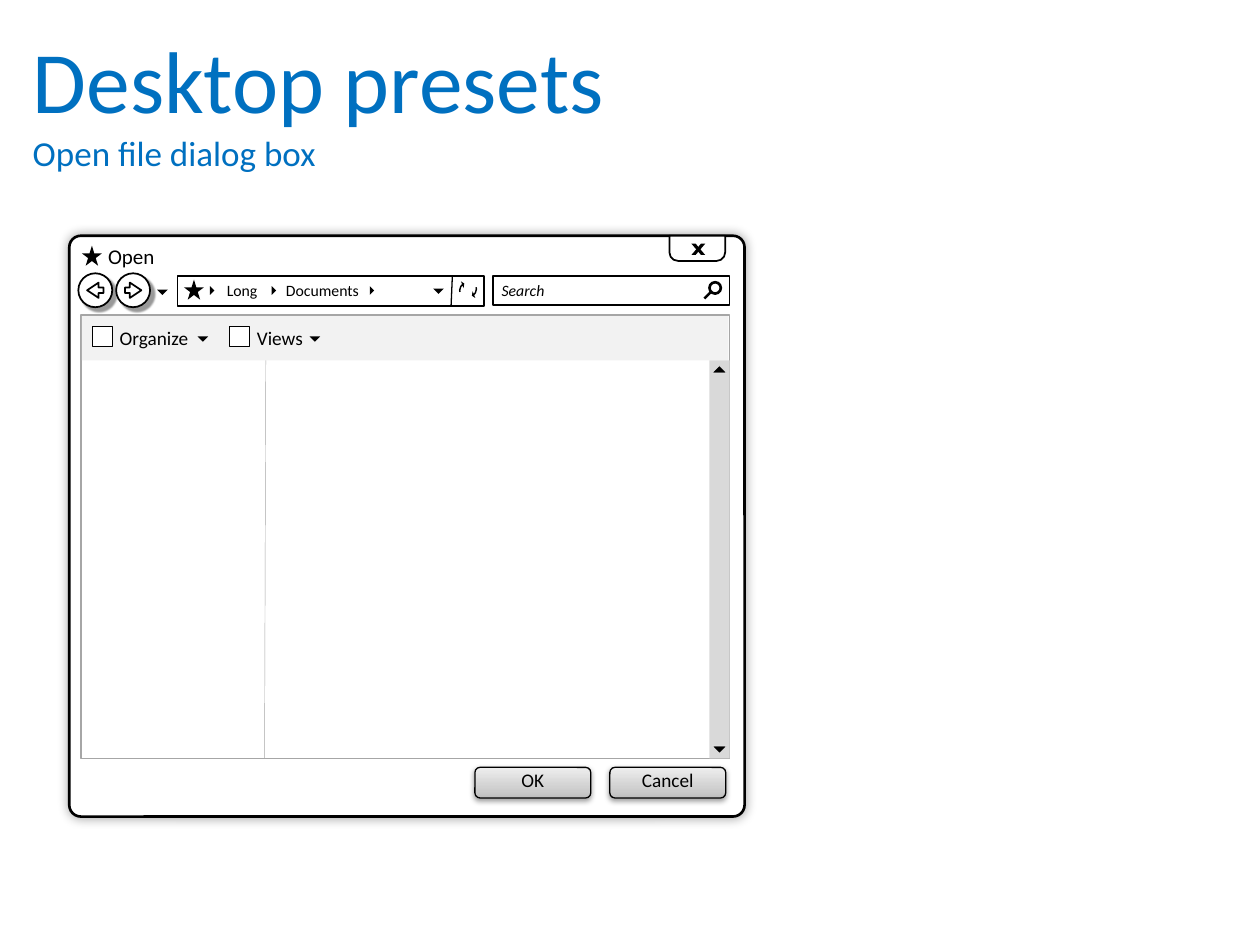
from copy import deepcopy
from dataclasses import dataclass

from lxml import etree
from pptx import Presentation
from pptx.dml.color import RGBColor
from pptx.enum.shapes import MSO_CONNECTOR, MSO_SHAPE
from pptx.enum.text import MSO_ANCHOR, MSO_AUTO_SIZE, PP_ALIGN
from pptx.oxml.ns import qn
from pptx.util import Pt

RECT = MSO_SHAPE.RECTANGLE
ROUND_RECT = MSO_SHAPE.ROUNDED_RECTANGLE
TAB = MSO_SHAPE.ROUND_2_SAME_RECTANGLE
SLASH = MSO_SHAPE.PARALLELOGRAM
ELLIPSE = MSO_SHAPE.OVAL
STAR = MSO_SHAPE.STAR_5_POINT
TRIANGLE = MSO_SHAPE.RIGHT_TRIANGLE
LEFT_ARROW = MSO_SHAPE.LEFT_ARROW
RIGHT_ARROW = MSO_SHAPE.RIGHT_ARROW
CIRCULAR_ARROW = MSO_SHAPE.CIRCULAR_ARROW
STRAIGHT = MSO_CONNECTOR.STRAIGHT
TOP, MIDDLE = MSO_ANCHOR.TOP, MSO_ANCHOR.MIDDLE
LEFT, CENTER = PP_ALIGN.LEFT, PP_ALIGN.CENTER
GROW = MSO_AUTO_SIZE.SHAPE_TO_FIT_TEXT

UP, RIGHT, DOWN = 135, 225, 315


@dataclass(frozen=True)
class Theme:
    font: str = "Calibri"
    accent: str = "0070C0"
    ink: str = "000000"
    paper: str = "FFFFFF"
    border: str = "A6A6A6"
    toolbar: str = "F2F2F2"
    scrollbar: str = "D9D9D9"
    button: tuple = ((0, "BDBDBD"), (0.35, "D1D1D1"), (1, "EEEEEE"))
    title: int = 50
    subtitle: int = 20
    caption: int = 12
    label: int = 11
    small: int = 9


class Builder:
    def __init__(self, slide, theme):
        self.s = slide
        self.t = theme

    def run(self, p, text, size, color=None, italic=False):
        r = p.add_run()
        r.text = text
        r.font.name = self.t.font
        r.font.size = Pt(size)
        r.font.italic = italic
        r.font.color.rgb = RGBColor.from_string(color or self.t.ink)

    def frame(self, tf, insets, anchor=TOP):
        tf.word_wrap = True
        tf.vertical_anchor = anchor
        tf.margin_left, tf.margin_top, tf.margin_right, tf.margin_bottom = map(Pt, insets)

    def title(self, box, *lines):
        sp = self.s.shapes.title
        sp.left, sp.top, sp.width, sp.height = map(Pt, box)
        tf = sp.text_frame
        self.frame(tf, (7.2, 3.6, 7.2, 3.6))
        tf.auto_size = GROW
        for i, (text, size) in enumerate(lines):
            p = tf.add_paragraph() if i else tf.paragraphs[0]
            p.alignment = LEFT
            p.space_before = Pt(0)
            self.run(p, text, size, self.t.accent)

    def text(self, x, y, w, h, text, size, italic=False, inset=0):
        sp = self.s.shapes.add_textbox(Pt(x), Pt(y), Pt(w), Pt(h))
        tf = sp.text_frame
        self.frame(tf, (inset, 3, inset, 3))
        tf.auto_size = GROW
        self.run(tf.paragraphs[0], text, size, italic=italic)

    def shape(self, kind, x, y, w, h, fill=None, line=None, width=1, adj=(), rot=0):
        sp = self.s.shapes.add_shape(kind, Pt(x), Pt(y), Pt(w), Pt(h))
        sp.shadow.inherit = False
        sp.rotation = rot
        for i, value in enumerate(adj):
            sp.adjustments[i] = value
        sp.fill.solid()
        sp.fill.fore_color.rgb = RGBColor.from_string(fill or self.t.paper)
        if line:
            sp.line.color.rgb = RGBColor.from_string(line)
            sp.line.width = Pt(width)
        else:
            sp.line.fill.background()
        return sp

    def glyph(self, kind, x, y, w, h, adj=(), rot=0):
        return self.shape(kind, x, y, w, h, self.t.ink, adj=adj, rot=rot)

    def pointer(self, x, y, size, rot):
        return self.glyph(TRIANGLE, x, y, size, size, rot=rot)

    def shadow(self, sp, alpha, blur, dist, angle):
        effects = sp._element.spPr.find(qn("a:effectLst"))
        shadow = etree.SubElement(
            effects, qn("a:outerShdw"), blurRad=str(Pt(blur)), dist=str(Pt(dist)),
            dir=str(angle * 60000), algn="ctr", rotWithShape="0")
        color = etree.SubElement(shadow, qn("a:srgbClr"), val=self.t.ink)
        etree.SubElement(color, qn("a:alpha"), val=str(alpha * 1000))

    def line(self, x1, y1, x2, y2, color, width):
        c = self.s.shapes.add_connector(STRAIGHT, Pt(x1), Pt(y1), Pt(x2), Pt(y2))
        c.line.color.rgb = RGBColor.from_string(color)
        c.line.width = Pt(width)
        etree.SubElement(c._element.spPr, qn("a:effectLst"))

    def nav_button(self, x, kind):
        ink = self.t.ink
        sp = self.shape(ELLIPSE, x, 156.2, 19.4, 19.4, line=ink)
        self.shadow(sp, 40, 1, 3, 45)
        self.shape(kind, x + 5, 161.5, 9.4, 8.8, line=ink, adj=(0.354, 0.749))

    def menu(self, x, label, pointer_x):
        self.shape(RECT, x, 186.5, 11.5, 11.5, line=self.t.ink, width=0.25)
        self.text(x + 15.8, 183.6, 45.4, 18.7, label, self.t.label)
        self.pointer(pointer_x, 190.1, 4.3, DOWN)

    def button(self, x, label):
        sp = self.shape(ROUND_RECT, x, 438.5, 66.2, 17.5, line=self.t.ink, width=0.75)
        sp.fill.gradient()
        sp.fill.gradient_angle = 90
        stops = sp._element.spPr.find(".//" + qn("a:gsLst"))
        stops.insert(1, deepcopy(stops[0]))
        for stop, (position, color) in zip(sp.fill.gradient_stops, self.t.button):
            stop.position = position
            stop.color.rgb = RGBColor.from_string(color)
        self.shadow(sp, 38, 3.1, 1.6, 90)
        tf = sp.text_frame
        self.frame(tf, (7.2, 0, 7.2, 3), MIDDLE)
        p = tf.paragraphs[0]
        p.alignment = CENTER
        self.run(p, label, self.t.label)


def main():
    prs = Presentation()
    prs.slide_width, prs.slide_height = Pt(720), Pt(540)
    t = Theme()
    b = Builder(prs.slides.add_slide(prs.slide_layouts[5]), t)

    b.title((11.5, 11.5, 697.7, 92.2),
            ("Desktop presets", t.title), ("Open file dialog box", t.subtitle))

    window = b.shape(ROUND_RECT, 39.6, 134.7, 385.9, 331.9, line=t.ink, width=1.5, adj=(0.02,))
    b.shadow(window, 37, 6, 0, 0)
    b.shape(TAB, 382.5, 134.7, 31.9, 14.4, line=t.ink, adj=(0.344, 0), rot=180)
    for flip in ("0", "1"):
        stroke = b.glyph(SLASH, 395.1, 139.2, 7.9, 6.5, adj=(0.851,))
        stroke._element.spPr.xfrm.set("flipH", flip)
    b.shape(RECT, 46.1, 180, 370.8, 253.4, line=t.border)

    b.nav_button(44.8, LEFT_ARROW)
    b.nav_button(66.4, RIGHT_ARROW)
    b.pointer(90.7, 163.4, 4.3, DOWN)
    b.glyph(STAR, 46.8, 140.4, 11.5, 11.5)
    b.text(54.7, 135.9, 225.4, 21.6, "Open", t.caption, inset=7.2)

    b.shape(RECT, 101.5, 157.7, 175, 17.3, line=t.ink)
    b.glyph(STAR, 105.1, 159.8, 11.5, 11.5)
    for x in (118.1, 153.4, 209.5):
        b.pointer(x, 164.2, 3.6, RIGHT)
    b.text(129.6, 157.7, 28.1, 16.6, "Long", t.small)
    b.text(163.4, 157.7, 73.4, 16.6, "Documents", t.small)
    b.pointer(248.4, 162.7, 4.3, DOWN)
    b.line(258.5, 157.7, 257.8, 174.2, t.ink, 0.75)
    for x, y, rot in ((262.1, 159.1, 210), (260.6, 159.8, 31.3)):
        b.glyph(CIRCULAR_ARROW, x, y, 12.2, 12.2, (0.07, 11.59, 119.57, 80.81, 0.17), rot)

    b.shape(RECT, 281.5, 157.7, 135.4, 16.6, line=t.ink)
    b.text(286.6, 157.7, 73.4, 16.6, "Search", t.small, italic=True)
    b.shape(ELLIPSE, 405.4, 161.3, 6.5, 6.5, line=t.ink, width=1.5)
    b.line(406.1, 167, 402.5, 170.6, t.ink, 1.5)

    b.shape(RECT, 46.8, 180.7, 369.4, 25.2, t.toolbar)
    b.menu(52.6, "Organize", 113.8)
    b.menu(131, "Views", 177.8)

    b.button(271.4, "OK")
    b.button(348.5, "Cancel")

    b.shape(RECT, 405.4, 205.9, 11.5, 227.5, t.scrollbar)
    for y, rot in ((210.2, UP), (423.4, DOWN)):
        b.shape(TRIANGLE, 408.2, y, 5.8, 5.8, t.ink, t.paper, 0.25, rot=rot)
    b.line(151.9, 205.9, 151.2, 433.4, t.border, 0.25)

    prs.save("out.pptx")


if __name__ == "__main__":
    main()
